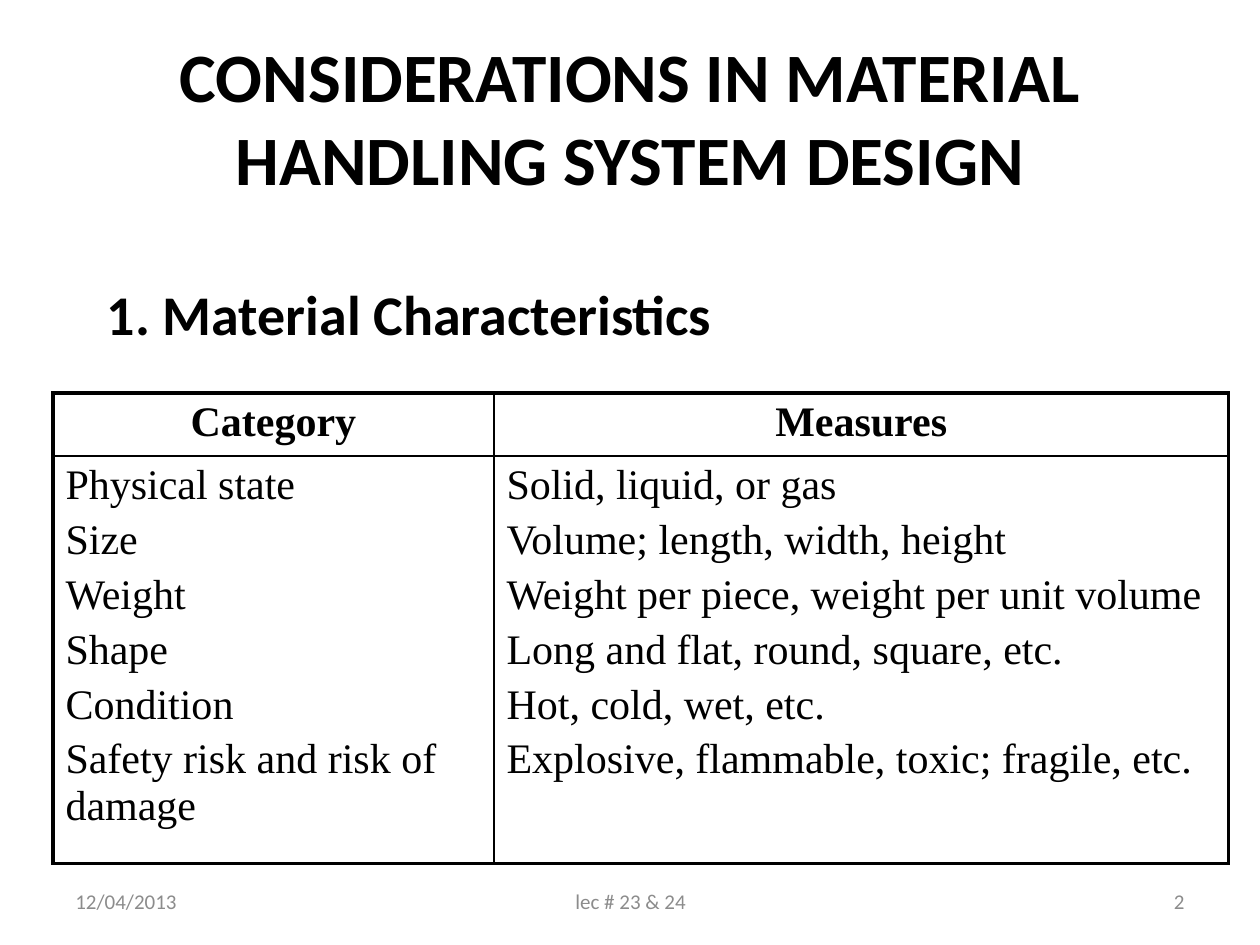
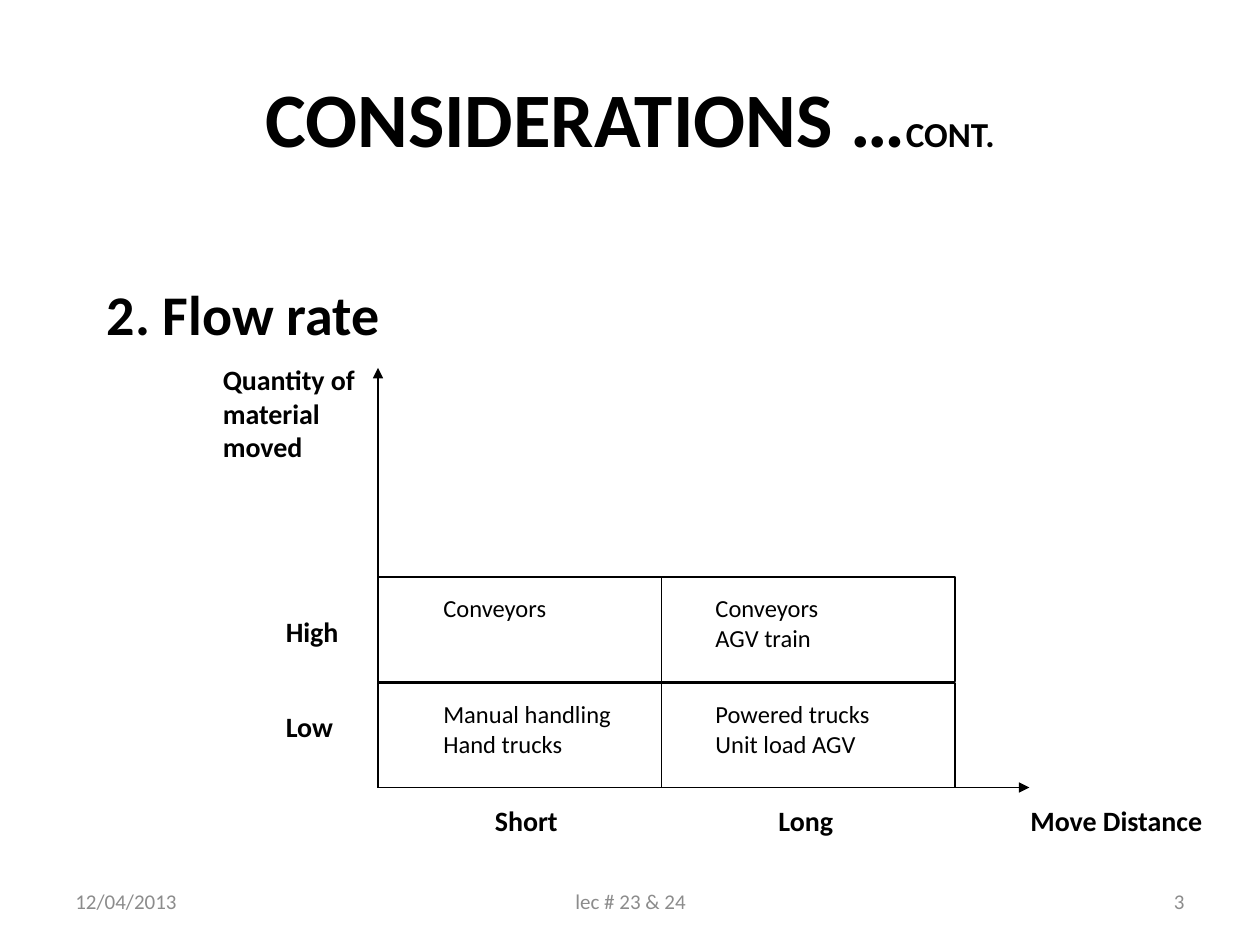
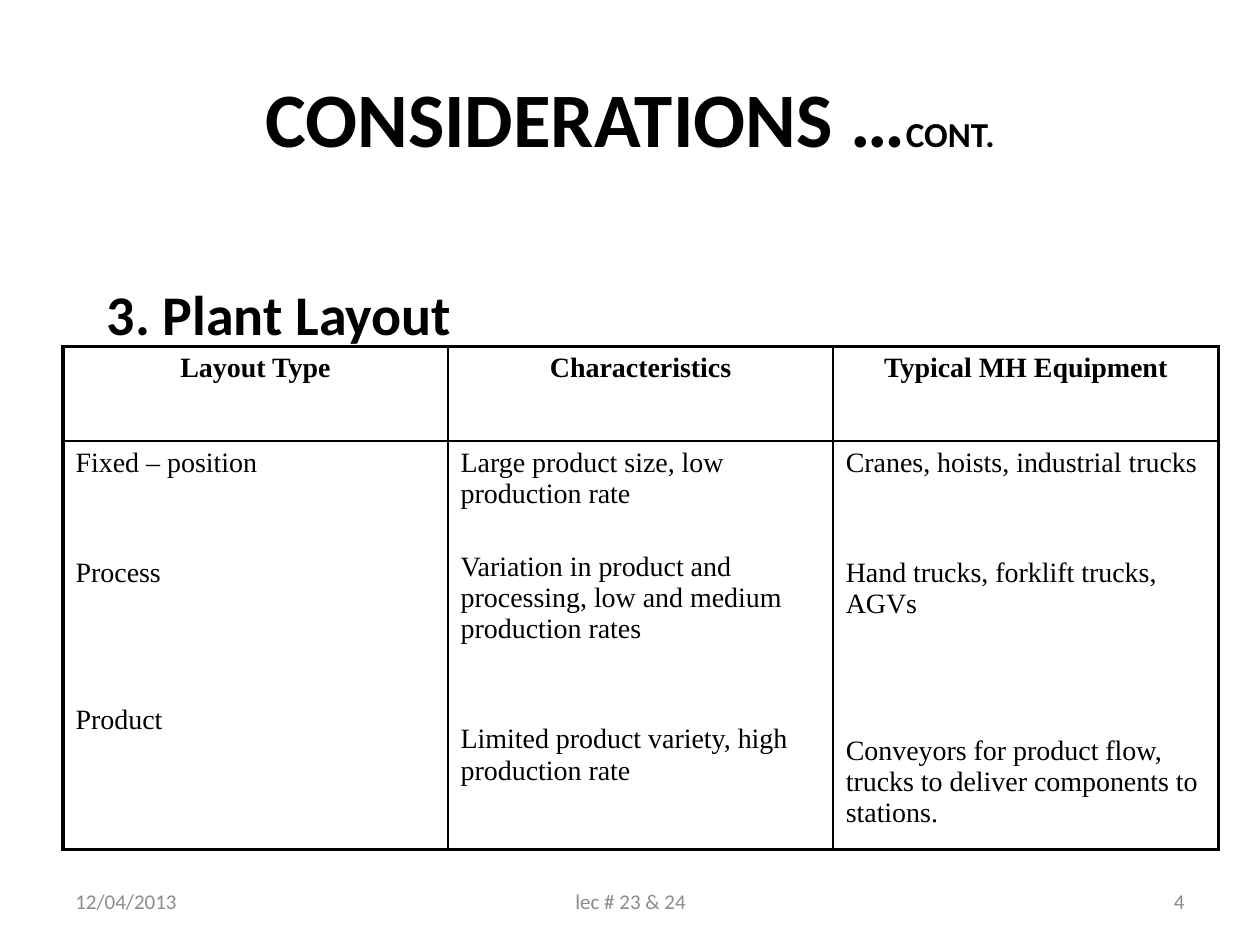
from lxml import etree
from pptx import Presentation
from pptx.dml.color import RGBColor
from pptx.enum import shapes, text
from pptx.oxml import ns
from pptx.util import Inches, Pt

# Shared style
BLACK, GREY = "000000", "8C8C8C"
SANS, SERIF = "Calibri", "Times New Roman"
LEFT, CENTER, RIGHT = text.PP_ALIGN.LEFT, text.PP_ALIGN.CENTER, text.PP_ALIGN.RIGHT
TOP, MIDDLE = text.MSO_ANCHOR.TOP, text.MSO_ANCHOR.MIDDLE
OUTER_BORDER, INNER_BORDER, LINE_WIDTH = 2.25, 1, 0.75


def rgb(color):
    return RGBColor.from_string(color)


def style(font, size, color=BLACK, bold=False, name=SANS):
    font.size, font.bold, font.name = Pt(size), bold, name
    font.color.rgb = rgb(color)


def add_text(page, area, lines, size, color=BLACK, bold=False, align=LEFT,
             anchor=TOP, wrap=True):
    """Add a text box with one paragraph a line and return its paragraphs."""
    frame = page.shapes.add_textbox(*map(Inches, area)).text_frame
    frame.word_wrap, frame.vertical_anchor = wrap, anchor
    frame.text = "\n".join(lines)
    for para in frame.paragraphs:
        para.alignment = align
        style(para.font, size, color, bold)
    return frame.paragraphs


def add_page(deck, number, title, heading, title_size=44, suffix=""):
    """Add a page with title, numbered heading and footer."""
    page = deck.slides.add_slide(deck.slide_layouts[6])
    para = add_text(page, (0.5, 0.3, 9, 1.25), [title], title_size,
                    bold=True, align=CENTER, anchor=MIDDLE)[0]
    if suffix:
        span = para.add_run()
        span.text, span.font.size = suffix, Pt(20)
    add_text(page, (0.75, 2.17, 8.5, 0.75), [heading], 32, bold=True)
    footer = [(0.5, 2.33, "12/04/2013", LEFT),
              (3.42, 3.17, "lec # 23 & 24", CENTER),
              (7.17, 2.33, str(number), RIGHT)]
    for left, width, words, align in footer:
        add_text(page, (left, 6.95, width, 0.4), [words], 12, GREY,
                 align=align, anchor=MIDDLE)
    return page


# Tables
def set_borders(cell, widths):
    """Draw the cell's borders; widths are left, right, top, bottom."""
    properties = cell._tc.get_or_add_tcPr()
    for side, width in zip("LRTB", widths):
        line = etree.SubElement(properties, ns.qn(f"a:ln{side}"), w=str(Pt(width)))
        fill = etree.SubElement(line, ns.qn("a:solidFill"))
        etree.SubElement(fill, ns.qn("a:srgbClr"), val=BLACK)


def fill_cell(cell, entries, size, header):
    """Write entries, each a text and the space before it in points."""
    cell.text = "\n".join(words for words, _ in entries)
    for para, (_, gap) in zip(cell.text_frame.paragraphs, entries):
        para.alignment = CENTER if header else LEFT
        para.space_before = Pt(gap)
        style(para.font, size, bold=header, name=SERIF)


def add_grid(page, left, top, widths, heights, rows, size):
    """Add a plain table with a heavy frame and a header row."""
    area = map(Inches, (left, top, sum(widths), sum(heights)))
    table = page.shapes.add_table(len(rows), len(widths), *area).table
    table.first_row = table.horz_banding = False
    for column, width in zip(table.columns, widths):
        column.width = Inches(width)
    for r, (height, row) in enumerate(zip(heights, rows)):
        table.rows[r].height = Inches(height)
        for c, entries in enumerate(row):
            cell = table.cell(r, c)
            edges = (c == 0, c == len(widths) - 1, r == 0, r == len(rows) - 1)
            set_borders(cell, [OUTER_BORDER if edge else INNER_BORDER for edge in edges])
            cell.fill.background()
            fill_cell(cell, entries, size, header=r == 0)


def header_row(*names):
    return [[(name, 0)] for name in names]


def spaced(lines, gaps):
    return list(zip(lines, gaps))


# Diagram
def add_axis(page, start, end):
    axis = page.shapes.add_connector(shapes.MSO_CONNECTOR.STRAIGHT,
                                     *map(Inches, start + end))
    axis.line.width = Pt(LINE_WIDTH)
    axis.line.color.rgb = rgb(BLACK)
    etree.SubElement(axis.line._get_or_add_ln(), ns.qn("a:tailEnd"), type="triangle")
    etree.SubElement(axis._element.spPr, ns.qn("a:effectLst"))


def add_quadrant(page, area, text_left, lines):
    box = page.shapes.add_shape(shapes.MSO_SHAPE.RECTANGLE, *map(Inches, area))
    box.shadow.inherit = False
    box.fill.background()
    box.line.width = Pt(LINE_WIDTH)
    box.line.color.rgb = rgb(BLACK)
    add_text(page, (text_left, area[1] + 0.08, 1.67, 0.57), lines, 14)


# Pages
def material_page(deck):
    page = add_page(deck, 2, "CONSIDERATIONS IN MATERIAL HANDLING SYSTEM DESIGN",
                    "1. Material Characteristics", title_size=39.6)
    categories = ["Physical state", "Size", "Weight", "Shape", "Condition",
                  "Safety risk and risk of damage"]
    measures = ["Solid, liquid, or gas", "Volume; length, width, height",
                "Weight per piece, weight per unit volume",
                "Long and flat, round, square, etc.", "Hot, cold, wet, etc.",
                "Explosive, flammable, toxic; fragile, etc."]
    gaps = [0] + [4.8] * 5
    add_grid(page, 0.42, 3.12, [3.5, 5.83], [0.5, 3.01],
             [header_row("Category", "Measures"),
              [spaced(categories, gaps), spaced(measures, gaps)]], 24)


def flow_page(deck):
    page = add_page(deck, 3, "CONSIDERATIONS …", "2. Flow rate", suffix="CONT.")
    origin = (3, 6.25)
    add_axis(page, origin, (8.17, 6.25))
    add_axis(page, origin, (3, 2.92))

    columns = [(3, 2.25, 3.42), (5.25, 2.33, 5.58)]
    equipment = {
        5.42: [["Manual handling", "Hand trucks"], ["Powered trucks", "Unit load AGV"]],
        4.58: [["Conveyors"], ["Conveyors", "AGV train"]],
    }
    for top, row in equipment.items():
        for (left, width, text_left), lines in zip(columns, row):
            add_quadrant(page, (left, top, width, 0.83), text_left, lines)

    labels = [(2.17, 4.83, 0.67, ["High"]), (2.17, 5.58, 0.62, ["Low"]),
              (6.08, 6.33, 0.69, ["Long"]), (3.83, 6.33, 0.73, ["Short"]),
              (8.08, 6.33, 1.6, ["Move Distance"]),
              (1.67, 2.83, 1.35, ["Quantity of", "material", "moved"])]
    for left, top, width, lines in labels:
        height = 0.1 + 0.27 * len(lines)
        add_text(page, (left, top, width, height), lines, 16, bold=True, wrap=False)


def layout_page(deck):
    page = add_page(deck, 4, "CONSIDERATIONS …", "3. Plant Layout", suffix="CONT.")
    # Space before a paragraph that stands one, two or three lines lower
    one, two, three = (3.1 + 21 * count for count in (1, 2, 3))
    layouts = ["Fixed – position", "Process", "Product"]
    characteristics = ["Large product size, low production rate",
                       "Variation in product and processing, "
                       "low and medium production rates",
                       "Limited product variety, high production rate"]
    handling = ["Cranes, hoists, industrial trucks",
                "Hand trucks, forklift trucks, AGVs",
                "Conveyors for product flow, trucks to deliver components to stations."]
    add_grid(page, 0.5, 2.75, [9.17 / 3] * 3, [0.75, 3.13],
             [header_row("Layout Type", "Characteristics", "Typical MH Equipment"),
              [spaced(layouts, [0, two, three]),
               spaced(characteristics, [0, one, two]),
               spaced(handling, [0, two, three])]], 16)


def main():
    deck = Presentation()
    deck.slide_width, deck.slide_height = Inches(10), Inches(7.5)
    material_page(deck)
    flow_page(deck)
    layout_page(deck)
    deck.save("out.pptx")


if __name__ == "__main__":
    main()
